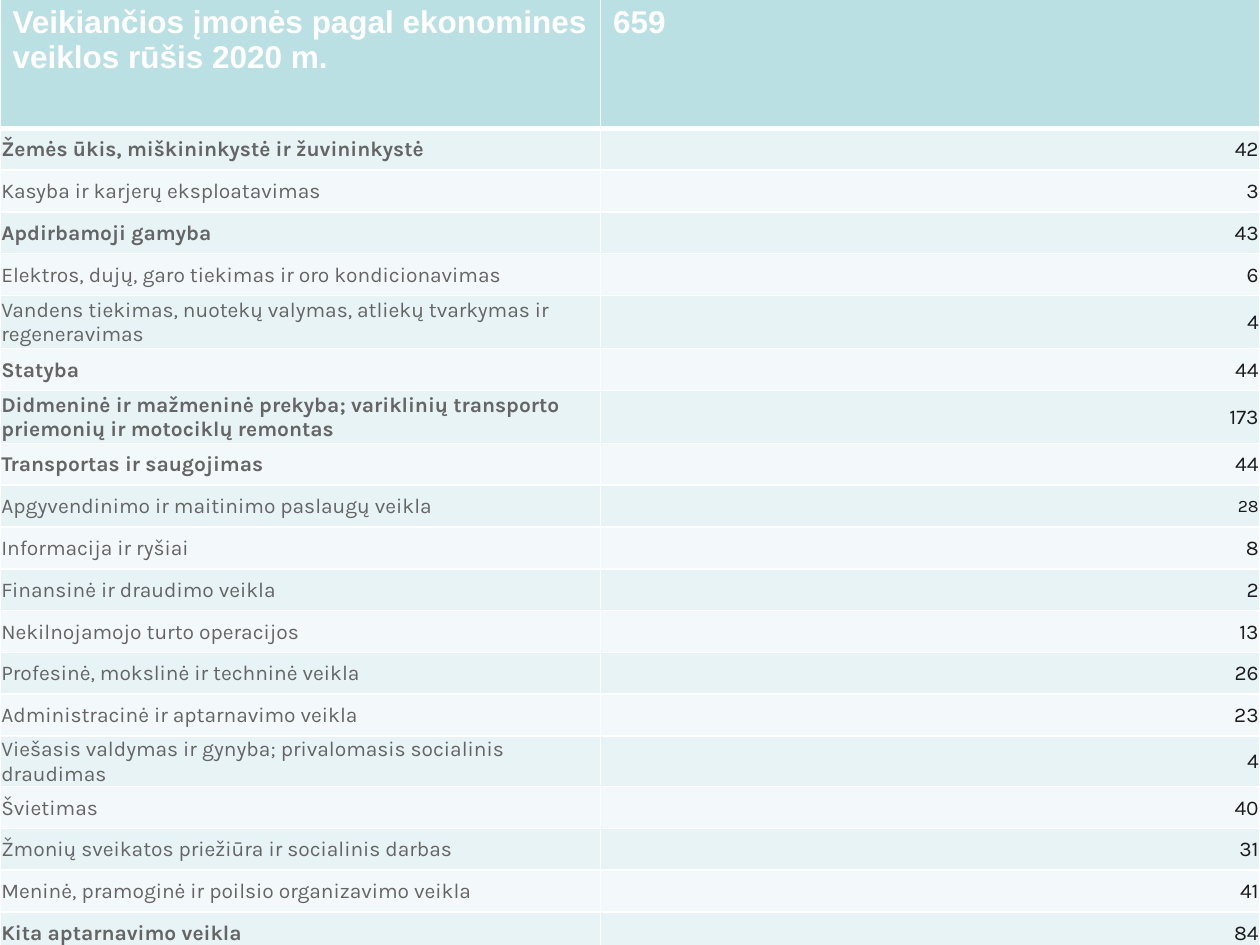
from lxml.etree import SubElement
from pptx import Presentation
from pptx.dml.color import RGBColor
from pptx.enum.text import MSO_ANCHOR as Anchor, PP_ALIGN as Align
from pptx.oxml.ns import qn
from pptx.util import Pt

COLORS = {
    "header": "BBE0E3", "band_dark": "E7F3F4", "band_light": "F3F9FA",
    "white": "FFFFFF", "activity": "656565", "count": "1C1C1C",
    "back_top": "6D9200", "back_bottom": "99CC00",
}
ROW_HEIGHT, TALL_ROW_HEIGHT, HEADER_HEIGHT = 23.9, 30.3, 74.3
HEADER = ("Veikiančios įmonės pagal ekonomines veiklos rūšis 2020 m.", "659")
# activity, number of companies, bold
ACTIVITIES = [
    ("Žemės ūkis, miškininkystė ir žuvininkystė", 42, True),
    ("Kasyba ir karjerų eksploatavimas", 3, False),
    ("Apdirbamoji gamyba", 43, True),
    ("Elektros, dujų, garo tiekimas ir oro kondicionavimas", 6, False),
    ("Vandens tiekimas, nuotekų valymas, atliekų tvarkymas ir regeneravimas", 4, False),
    ("Statyba", 44, True),
    ("Didmeninė ir mažmeninė prekyba; variklinių transporto priemonių ir motociklų remontas",
     173, True),
    ("Transportas ir saugojimas", 44, True),
    ("Apgyvendinimo ir maitinimo paslaugų veikla", 28, False),
    ("Informacija ir ryšiai", 8, False),
    ("Finansinė ir draudimo veikla", 2, False),
    ("Nekilnojamojo turto operacijos", 13, False),
    ("Profesinė, mokslinė ir techninė veikla", 26, False),
    ("Administracinė ir aptarnavimo veikla", 23, False),
    ("Viešasis valdymas ir gynyba; privalomasis socialinis draudimas", 4, False),
    ("Švietimas", 40, False),
    ("Žmonių sveikatos priežiūra ir socialinis darbas", 31, False),
    ("Meninė, pramoginė ir poilsio organizavimo veikla", 41, False),
    ("Kita aptarnavimo veikla", 84, True),
]
TALL_ROWS = (5, 7)
SMALL_COUNT_ROW = 9


def set_borders(cell, top=1, bottom=1):
    """Draw white lines on all four sides, with widths in points."""
    properties = cell._tc.get_or_add_tcPr()
    for side, width in (("L", 1), ("R", 1), ("T", top), ("B", bottom)):
        line = SubElement(properties, qn(f"a:ln{side}"), w=str(Pt(width)))
        fill = SubElement(line, qn("a:solidFill"))
        SubElement(fill, qn("a:srgbClr"), val=COLORS["white"])


def fill_cell(cell, text, back, font_name, size, color, bold):
    cell.fill.solid()
    cell.fill.fore_color.rgb = RGBColor.from_string(COLORS[back])
    cell.text = text
    paragraph = cell.text_frame.paragraphs[0]
    font = paragraph.font
    font.name, font.size, font.bold = font_name, Pt(size), bold
    font.color.rgb = RGBColor.from_string(COLORS[color])
    return paragraph


prs = Presentation()
prs.slide_width, prs.slide_height = Pt(720), Pt(540)
slide = prs.slides.add_slide(prs.slide_layouts[6])

backdrop = slide.background.fill
backdrop.gradient()
backdrop.gradient_angle = 270
for stop, name in zip(backdrop.gradient_stops, ("back_top", "back_bottom")):
    stop.color.rgb = RGBColor.from_string(COLORS[name])

companies = slide.shapes.add_table(
    len(ACTIVITIES) + 1, 2, Pt(0), Pt(-1), Pt(720), Pt(541)).table
companies.columns[0].width = Pt(343.2)
companies.columns[1].width = Pt(376.8)

companies.rows[0].height = Pt(HEADER_HEIGHT)
for column, heading in enumerate(HEADER):
    cell = companies.cell(0, column)
    set_borders(cell, bottom=3)
    fill_cell(cell, heading, "header", "Arial", 18, "white", True)

for row, (activity, count, bold) in enumerate(ACTIVITIES, start=1):
    companies.rows[row].height = Pt(TALL_ROW_HEIGHT if row in TALL_ROWS else ROW_HEIGHT)
    band = "band_dark" if row % 2 else "band_light"
    activity_cell, count_cell = companies.cell(row, 0), companies.cell(row, 1)
    for cell in (activity_cell, count_cell):
        set_borders(cell, top=3 if row == 1 else 1)
        cell.vertical_anchor = Anchor.MIDDLE
        cell.margin_left = cell.margin_right = cell.margin_top = Pt(0.75)
        cell.margin_bottom = Pt(0)
    fill_cell(activity_cell, activity, band, "Karla", 12, "activity", bold)
    count_size = 10 if row == SMALL_COUNT_ROW else 12
    count_text = fill_cell(count_cell, str(count), band, "Karla", count_size, "count", False)
    count_text.alignment = Align.RIGHT

prs.save("out.pptx")
